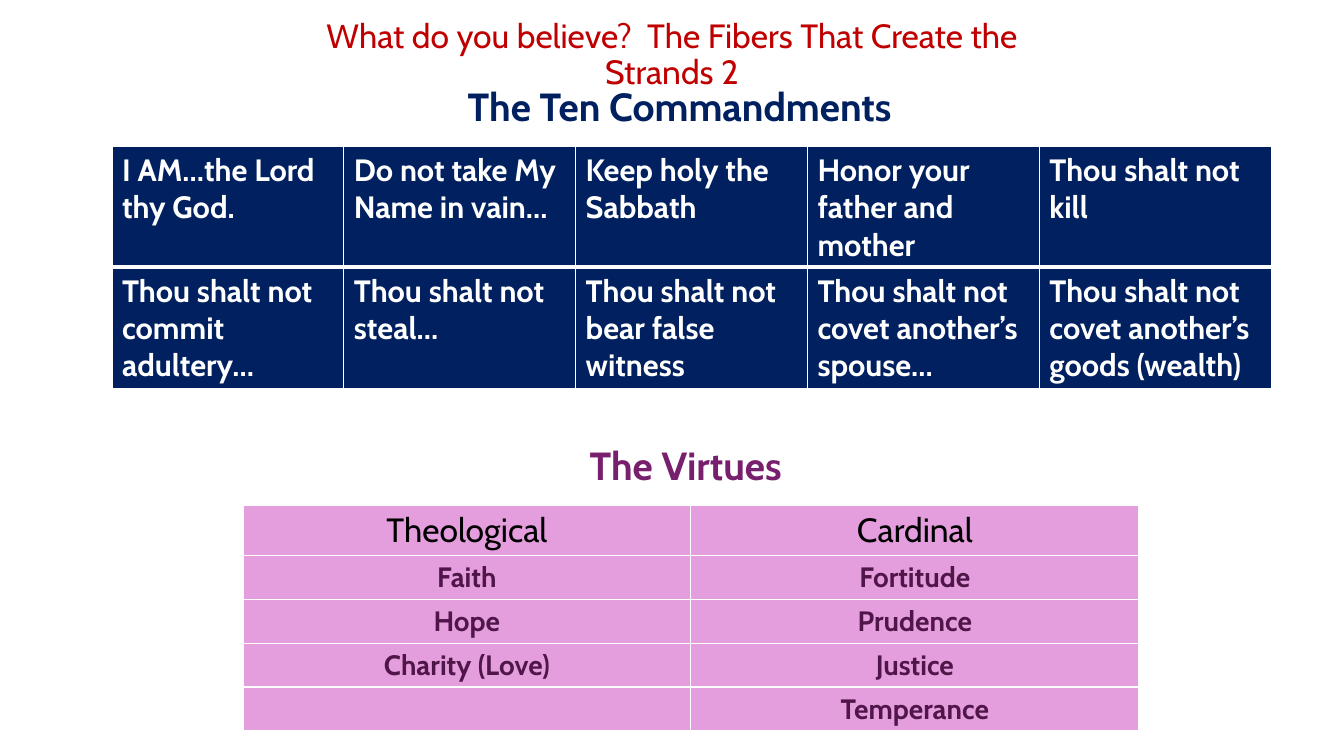
from dataclasses import dataclass

from lxml.etree import SubElement
from pptx import Presentation
from pptx.dml.color import RGBColor
from pptx.enum.text import MSO_ANCHOR, MSO_AUTO_SIZE, PP_ALIGN
from pptx.oxml.ns import qn
from pptx.util import Pt


@dataclass(frozen=True)
class Theme:
    font: str = "Cabin"
    red: str = "C00000"
    navy: str = "002060"
    white: str = "FFFFFF"
    black: str = "000000"
    pink: str = "E59EDD"
    purple: str = "78206E"
    plum: str = "501649"
    title: int = 24
    head: int = 28
    law: int = 22
    kind: int = 24
    virtue: int = 20


THEME = Theme()

LAWS = [
    ["I AM…the Lord thy God.", "Do not take My Name in vain…",
     "Keep holy the Sabbath", "Honor your father and mother",
     "Thou shalt not kill"],
    ["Thou shalt not commit adultery…", "Thou shalt not steal…",
     "Thou shalt not bear false witness",
     "Thou shalt not covet another’s spouse…",
     "Thou shalt not covet another’s goods (wealth)"],
]
VIRTUES = [
    ["Theological", "Cardinal"],
    ["Faith", "Fortitude"],
    ["Hope", "Prudence"],
    ["Charity (Love)", "Justice"],
    ["", "Temperance"],
]


def add_run(para, text, size, color, bold=False):
    run = para.add_run()
    run.text = text
    font = run.font
    font.name = THEME.font
    font.size = Pt(size)
    font.bold = bold
    font.color.rgb = RGBColor.from_string(color)


def add_title(slide, box, text):
    title = slide.shapes.title
    title.left, title.top, title.width, title.height = map(Pt, box)
    frame = title.text_frame
    frame.auto_size = MSO_AUTO_SIZE.NONE
    frame.word_wrap = True
    frame.vertical_anchor = MSO_ANCHOR.MIDDLE
    para = frame.paragraphs[0]
    para.alignment = PP_ALIGN.CENTER
    para.line_spacing = 0.9
    add_run(para, text, THEME.title, THEME.red)


def add_head(slide, box, text, color):
    frame = slide.shapes.add_textbox(*map(Pt, box)).text_frame
    frame.word_wrap = False
    frame.auto_size = MSO_AUTO_SIZE.SHAPE_TO_FIT_TEXT
    add_run(frame.paragraphs[0], text, THEME.head, color, True)


def add_edges(cell, top, bottom):
    """Draw white cell borders; top and bottom are widths in points."""
    props = cell._tc.get_or_add_tcPr()
    for side, width in (("L", 1), ("R", 1), ("T", top), ("B", bottom)):
        line = SubElement(props, qn(f"a:ln{side}"), w=str(Pt(width)))
        fill = SubElement(line, qn("a:solidFill"))
        SubElement(fill, qn("a:srgbClr"), val=THEME.white)


def add_grid(slide, box, rows, heights, fill, styles, align, rule=1):
    """Fill the box with equal columns; rule is the line below the first row.

    styles holds (size, color, bold) for the first row and for the others.
    """
    count = len(rows[0])
    table = slide.shapes.add_table(len(rows), count, *map(Pt, box)).table
    table.first_row = table.horz_banding = False
    for col in table.columns:
        col.width = Pt(box[2] / count)
    for i, texts in enumerate(rows):
        table.rows[i].height = Pt(heights[i])
        for j, text in enumerate(texts):
            cell = table.cell(i, j)
            add_edges(cell, rule if i == 1 else 1, rule if i == 0 else 1)
            cell.fill.solid()
            cell.fill.fore_color.rgb = RGBColor.from_string(fill)
            para = cell.text_frame.paragraphs[0]
            para.alignment = align
            if text:
                add_run(para, text, *styles[min(i, 1)])


def add_laws(slide, left, top, width):
    add_head(slide, (left + 247, top - 49.5, 334, 41),
             "The Ten Commandments", THEME.navy)
    style = (THEME.law, THEME.white, True)
    add_grid(slide, (left, top, width, 172), LAWS, [86] * 2, THEME.navy,
             (style, style), PP_ALIGN.LEFT, rule=3)


def add_virtues(slide, left, top, width):
    add_grid(slide, (left, top, width, 159), VIRTUES, [35] + [31] * 4,
             THEME.pink, ((THEME.kind, THEME.black, False),
                          (THEME.virtue, THEME.plum, True)), PP_ALIGN.CENTER)
    add_head(slide, (left + 240.5, top - 49, 159, 41),
             "The Virtues", THEME.purple)


def main():
    deck = Presentation()
    deck.slide_width, deck.slide_height = Pt(960), Pt(540)
    slide = deck.slides.add_slide(deck.slide_layouts[5])
    add_title(slide, (185, 16, 590, 47.5),
              "What do you believe?  The Fibers That Create the Strands 2")
    add_laws(slide, 80, 104.5, 828)
    add_virtues(slide, 173.5, 361, 640)
    deck.save("out.pptx")


if __name__ == "__main__":
    main()
